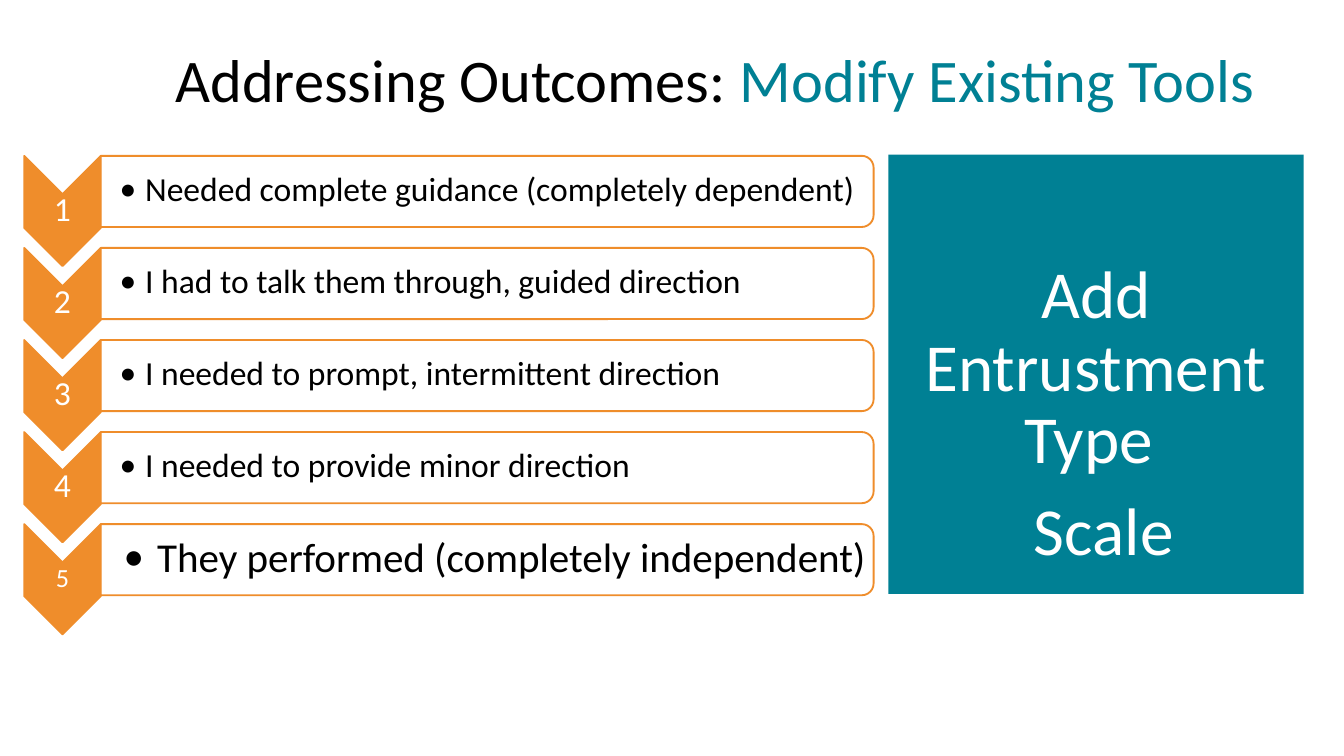
import dataclasses

import pptx
import pptx.dml.color
import pptx.enum.shapes
import pptx.enum.text
import pptx.oxml.ns
import pptx.util
from lxml import etree
from pptx.util import Inches, Pt

SHAPE = pptx.enum.shapes.MSO_SHAPE
ANCHOR = pptx.enum.text.MSO_ANCHOR
ALIGN = pptx.enum.text.PP_ALIGN


@dataclasses.dataclass(frozen=True)
class Theme:
    font: str = "Calibri"
    black: str = "000000"
    white: str = "FFFFFF"
    teal: str = "008094"
    orange: str = "EF8D2B"
    title_size: float = 32.4
    panel_size: float = 36
    level_size: float = 18
    last_number_size: float = 14
    last_level_size: float = 22


THEME = Theme()
LEVELS = [
    "Needed complete guidance (completely dependent)",
    "I had to talk them through, guided direction",
    "I needed to prompt, intermittent direction",
    "I needed to provide minor direction",
    "They performed (completely independent)",
]
FIRST_TOP, LAST_TOP = 1.16, 3.9
ROW_PITCH = (LAST_TOP - FIRST_TOP) / (len(LEVELS) - 1)
BAR_LEFT, BAR_LENGTH, BAR_HEIGHT = 0.75, 5.75, 0.53
CHEVRON_LEFT, CHEVRON_LENGTH, CHEVRON_WIDTH = 0.18, 0.82, 0.57


def rgb(color):
    return pptx.dml.color.RGBColor.from_string(color)


def format_para(para, size, color, align):
    para.alignment = align
    para.line_spacing = 0.9
    for span in para.runs:
        span.font.name = THEME.font
        span.font.size = Pt(size)
        span.font.color.rgb = rgb(color)


def set_frame(frame, anchor, left, top, right, bottom):
    frame.word_wrap = True
    frame.vertical_anchor = anchor
    frame.margin_left, frame.margin_top = Inches(left), Inches(top)
    frame.margin_right, frame.margin_bottom = Inches(right), Inches(bottom)


def add_bullet(para, indent):
    properties = para._p.get_or_add_pPr()
    properties.set("marL", str(Inches(indent)))
    properties.set("indent", str(-Inches(indent)))
    font = etree.SubElement(properties, pptx.oxml.ns.qn("a:buFont"))
    font.set("typeface", THEME.font)
    bullet = etree.SubElement(properties, pptx.oxml.ns.qn("a:buChar"))
    bullet.set("char", "•")


def add_solid(slide, kind, left, top, width, height, fill, line=None):
    shape = slide.shapes.add_shape(
        kind, Inches(left), Inches(top), Inches(width), Inches(height))
    shape.shadow.inherit = False
    shape.fill.solid()
    shape.fill.fore_color.rgb = rgb(fill)
    if line:
        shape.line.color.rgb = rgb(line)
        shape.line.width = Pt(1)
    else:
        shape.line.fill.background()
    return shape


def add_turned(slide, kind, left, top, width, height, fill):
    """Add a shape turned by 90 degrees that shows in the given frame."""
    shift = (width - height) / 2
    shape = add_solid(slide, kind, left + shift, top - shift,
                      height, width, fill, THEME.orange)
    shape.rotation = 90
    return shape


def set_opacity(shape, percent):
    color = shape.fill._xPr.find(".//" + pptx.oxml.ns.qn("a:srgbClr"))
    alpha = etree.SubElement(color, pptx.oxml.ns.qn("a:alpha"))
    alpha.set("val", str(percent * 1000))


def add_label(slide, text, left, top, width, height, size, color,
              align, inset=0.01, left_inset=0.01, bullet_indent=None):
    box = slide.shapes.add_textbox(
        Inches(left), Inches(top), Inches(width), Inches(height))
    frame = box.text_frame
    set_frame(frame, ANCHOR.MIDDLE, left_inset, inset, inset, inset)
    frame.text = text
    para = frame.paragraphs[0]
    if bullet_indent:
        add_bullet(para, bullet_indent)
    format_para(para, size, color, align)


def add_title(slide):
    title = slide.shapes.title
    title.left, title.top = Inches(1.01), Inches(0.19)
    title.width, title.height = Inches(8.62), Inches(0.85)
    title.text_frame.vertical_anchor = ANCHOR.MIDDLE
    title.text_frame.word_wrap = True
    para = title.text_frame.paragraphs[0]
    para.add_run().text = "Addressing Outcomes: "
    para.add_run().text = "Modify Existing Tools"
    format_para(para, THEME.title_size, THEME.black, ALIGN.CENTER)
    para.runs[1].font.color.rgb = rgb(THEME.teal)


def add_level(slide, index, text):
    is_last = index == len(LEVELS) - 1
    number_size = THEME.last_number_size if is_last else THEME.level_size
    text_size = THEME.last_level_size if is_last else THEME.level_size
    inset, left_inset, indent = (
        (0.02, 0.17, 0.25) if is_last else (0.01, 0.14, 0.19))
    top = FIRST_TOP + index * ROW_PITCH

    add_turned(slide, SHAPE.CHEVRON, CHEVRON_LEFT, top,
               CHEVRON_WIDTH, CHEVRON_LENGTH, THEME.orange)
    add_label(slide, str(index + 1), CHEVRON_LEFT, top + 0.28,
              CHEVRON_WIDTH, 0.25, number_size, THEME.white, ALIGN.CENTER)
    bar = add_turned(slide, SHAPE.ROUND_2_SAME_RECTANGLE, BAR_LEFT, top,
                     BAR_LENGTH, BAR_HEIGHT, THEME.white)
    set_opacity(bar, 90)
    add_label(slide, text, BAR_LEFT, top + 0.02, 5.73, 0.48, text_size,
              THEME.black, ALIGN.LEFT, inset, left_inset, indent)


def add_panel(slide):
    panel = add_solid(slide, SHAPE.RECTANGLE, 6.61, 1.15, 3.09, 3.27,
                      THEME.teal)
    frame = panel.text_frame
    set_frame(frame, ANCHOR.TOP, 0.1, 0.79, 0.1, 0.05)
    frame.text = "Add Entrustment Type \n Scale"
    for para in frame.paragraphs:
        format_para(para, THEME.panel_size, THEME.white, ALIGN.CENTER)
    frame.paragraphs[1].space_before = Pt(10)


def main():
    deck = pptx.Presentation()
    deck.slide_width = Inches(10)
    deck.slide_height = deck.slide_width * 9 // 16
    slide = deck.slides.add_slide(deck.slide_layouts.get_by_name("Title Only"))
    add_title(slide)
    for index, text in enumerate(LEVELS):
        add_level(slide, index, text)
    add_panel(slide)
    deck.save("out.pptx")


if __name__ == "__main__":
    main()
